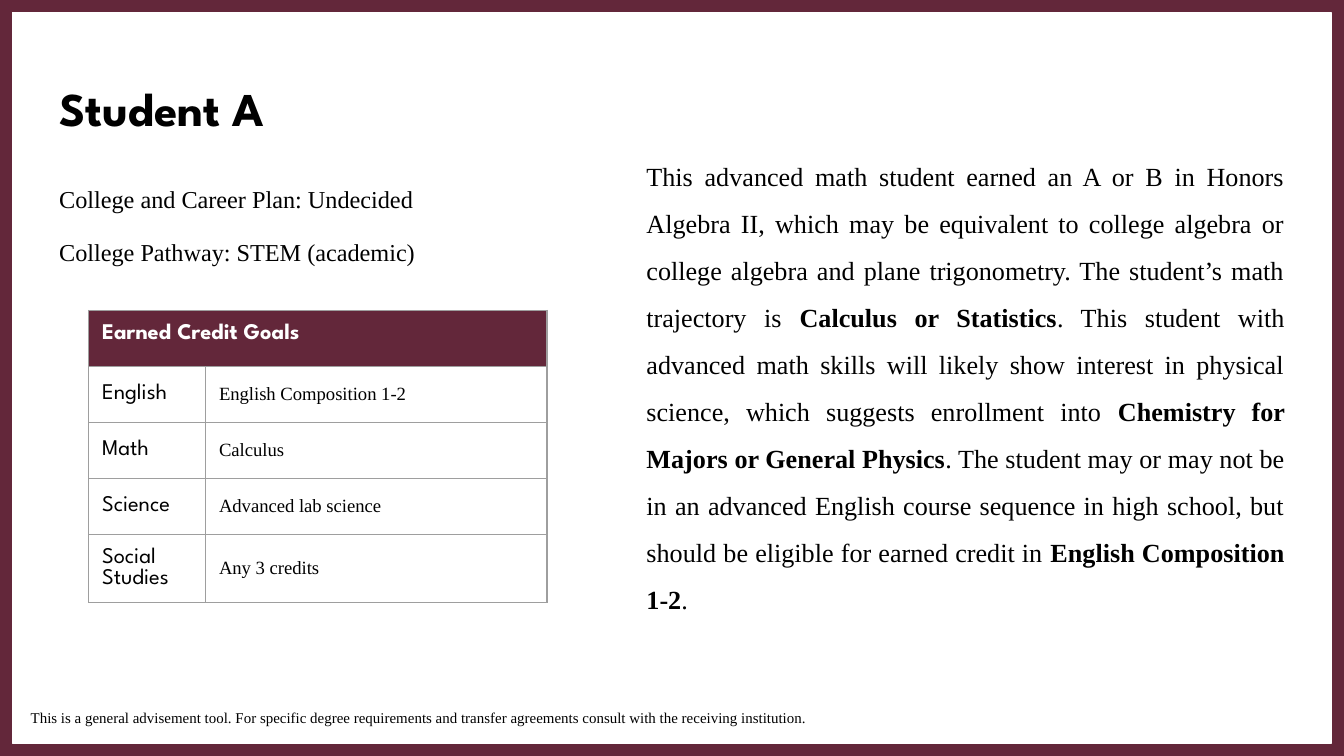
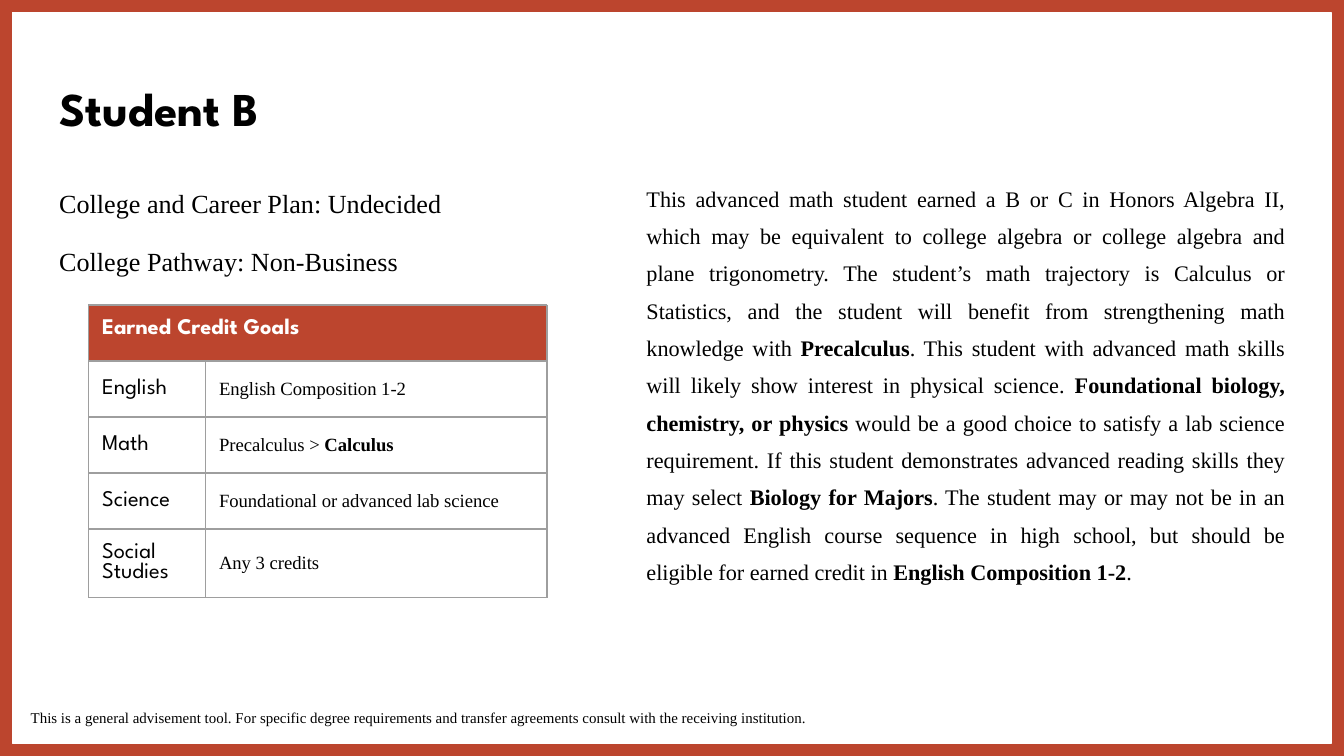
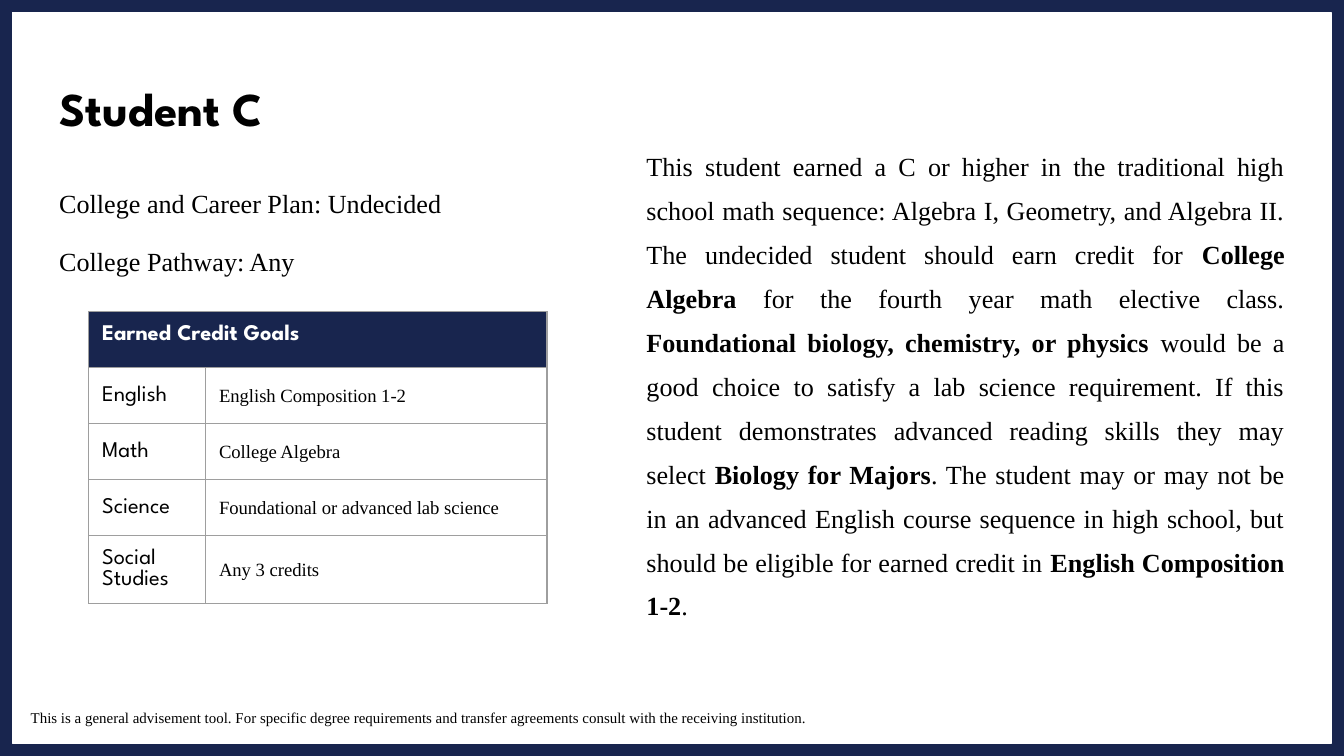
from lxml import etree
from pptx import Presentation
from pptx.dml.color import RGBColor
from pptx.enum.shapes import MSO_SHAPE
from pptx.enum.text import MSO_ANCHOR, MSO_AUTO_SIZE, PP_ALIGN
from pptx.oxml.ns import qn
from pptx.util import Inches, Pt

RECTANGLE = MSO_SHAPE.RECTANGLE
TOP, MIDDLE = MSO_ANCHOR.TOP, MSO_ANCHOR.MIDDLE
LEFT, JUSTIFY = PP_ALIGN.LEFT, PP_ALIGN.JUSTIFY
NO_AUTOFIT = MSO_AUTO_SIZE.NONE

DISPLAY, SERIF = "League Spartan", "Times New Roman"
BLACK, WHITE, GRID_GRAY = "000000", "FFFFFF", "9E9E9E"
SLIDE_WIDTH = 10
SLIDE_HEIGHT = SLIDE_WIDTH * 9 / 16
TWO_CONTENT_LAYOUT = 3
MARGIN = 0.1

PANEL_WIDTH, PANEL_HEIGHT = 9.81, 5.44
PANEL_BOX = ((SLIDE_WIDTH - PANEL_WIDTH) / 2, (SLIDE_HEIGHT - PANEL_HEIGHT) / 2,
             PANEL_WIDTH, PANEL_HEIGHT)
TITLE_BOX = (0.34, 0.49, 4.05, 0.63)
PLAN_BOX = (0.34, 1.26, 4.05, 1.01)
SUMMARY_BOX = (4.71, 0.44, 4.95, 4.77)
FOOTER_BOX = (0.13, 5.17, 9.73, 0.29)
TABLE_LEFT = 0.66
COLUMN_WIDTHS = (0.87, 2.54)
ROW_HEIGHT = 5 / 12

PLAN = "College and Career Plan: Undecided"
SUBJECTS = ("English", "Math", "Science", "Social Studies")
DISCLAIMER = ("This is a general advisement tool. For specific degree requirements and "
              "transfer agreements consult with the receiving institution.")
ENGLISH_NOTE = ("The student may or may not be in an advanced English course sequence in high "
                "school, but should be eligible for earned credit in **English Composition 1-2**.")
SCIENCE_NOTE = ("**Foundational biology, chemistry, or physics** would be a good choice to satisfy "
                "a lab science requirement. If this student demonstrates advanced reading skills "
                "they may select **Biology for Majors**. ")

# Double asterisks enclose bold words.
STUDENTS = [
    dict(
        name="Student A", accent="63273A", pathway="STEM (academic)",
        plan_format=dict(size=12.95, line_spacing=1.05),
        summary_format=dict(size=14, line_spacing=1.5),
        table_top=2.31,
        goals=("English Composition 1-2", "Calculus", "Advanced lab science", "Any 3 credits"),
        summary="This advanced math student earned an A or B in Honors Algebra II, which may be "
                "equivalent to college algebra or college algebra and plane trigonometry. The "
                "student’s math trajectory is **Calculus or Statistics**. This student with "
                "advanced math skills will likely show interest in physical science, which "
                "suggests enrollment into **Chemistry for Majors or General Physics**. "
                + ENGLISH_NOTE,
    ),
    dict(
        name="Student B", accent="BC452E", pathway="Non-Business",
        plan_format=dict(size=14, line_spacing=1.15),
        summary_format=dict(size=11.9, line_spacing=1.4),
        table_top=2.27,
        goals=("English Composition 1-2", "Precalculus > **Calculus**",
               "Foundational or advanced lab science", "Any 3 credits"),
        summary="This advanced math student earned a B or C in Honors Algebra II, which may be "
                "equivalent to college algebra or college algebra and plane trigonometry. The "
                "student’s math trajectory is Calculus or Statistics, and the student will "
                "benefit from strengthening math knowledge with **Precalculus**. This student "
                "with advanced math skills will likely show interest in physical science. "
                + SCIENCE_NOTE + ENGLISH_NOTE,
    ),
    dict(
        name="Student C", accent="18254E", pathway="Any",
        plan_format=dict(size=14, line_spacing=1.15),
        summary_format=dict(size=14, line_spacing=1.4),
        table_top=2.32,
        goals=("English Composition 1-2", "College Algebra",
               "Foundational or advanced lab science", "Any 3 credits"),
        summary="This student earned a C or higher in the traditional high school math sequence: "
                "Algebra I, Geometry, and Algebra II. The undecided student should earn credit "
                "for **College Algebra** for the fourth year math elective class. "
                + SCIENCE_NOTE + ENGLISH_NOTE,
    ),
]


def color(hex_code):
    return RGBColor.from_string(hex_code)


def inches(box):
    return [Inches(length) for length in box]


def place(shape, box, anchor=TOP):
    """Set a text shape's box, margins and anchor."""
    shape.left, shape.top, shape.width, shape.height = inches(box)
    frame = shape.text_frame
    frame.word_wrap = True
    frame.auto_size = NO_AUTOFIT
    frame.vertical_anchor = anchor
    frame.margin_left = frame.margin_right = Inches(MARGIN)
    frame.margin_top = frame.margin_bottom = Inches(MARGIN)


def write(paragraph, text, *, font=SERIF, size=10, fill=BLACK, bold=False, align=LEFT,
          line_spacing=1.0, before=0, after=0):
    """Fill a paragraph, with text between double asterisks in bold."""
    properties = paragraph._p.get_or_add_pPr()
    properties.set("marL", "0")
    properties.set("indent", "0")
    etree.SubElement(properties, qn("a:buNone"))
    paragraph.alignment = align
    paragraph.line_spacing = line_spacing
    paragraph.space_before, paragraph.space_after = Pt(before), Pt(after)
    for index, part in enumerate(text.split("**")):
        if part:
            run = paragraph.add_run()
            run.text = part
            run.font.name, run.font.size = font, Pt(size)
            run.font.bold = bold or index % 2 == 1
            run.font.color.rgb = color(fill)


def add_frame(slide, accent):
    """Color the background and lay the white panel behind everything."""
    background = slide.background.fill
    background.solid()
    background.fore_color.rgb = color(accent)
    panel = slide.shapes.add_shape(RECTANGLE, *inches(PANEL_BOX))
    panel.shadow.inherit = False
    panel.fill.solid()
    panel.fill.fore_color.rgb = color(WHITE)
    panel.line.color.rgb = color(WHITE)
    panel.line.width = Pt(0.75)
    slide.shapes.element.insert(2, panel.element)


def fill_placeholders(slide, student):
    title, plan, summary = slide.placeholders
    place(title, TITLE_BOX)
    write(title.text_frame.paragraphs[0], student["name"], font=DISPLAY, size=25.2, bold=True)

    place(plan, PLAN_BOX)
    write(plan.text_frame.paragraphs[0], PLAN, **student["plan_format"])
    write(plan.text_frame.add_paragraph(), f"College Pathway: {student['pathway']}",
          before=12, after=12, **student["plan_format"])

    place(summary, SUMMARY_BOX, MIDDLE)
    write(summary.text_frame.paragraphs[0], student["summary"], align=JUSTIFY, after=12,
          **student["summary_format"])


def add_borders(cell):
    properties = cell._tc.get_or_add_tcPr()
    for side in ("lnL", "lnR", "lnT", "lnB"):
        line = etree.SubElement(properties, qn(f"a:{side}"), w=str(Pt(0.75)))
        fill = etree.SubElement(line, qn("a:solidFill"))
        etree.SubElement(fill, qn("a:srgbClr"), val=GRID_GRAY)


def format_cell(cell, fill=None, anchor=MIDDLE):
    cell.margin_left = cell.margin_right = Inches(MARGIN)
    cell.margin_top = cell.margin_bottom = Inches(MARGIN)
    cell.vertical_anchor = anchor
    add_borders(cell)
    if fill:
        cell.fill.solid()
        cell.fill.fore_color.rgb = color(fill)
    else:
        cell.fill.background()


def add_goals_table(slide, top, goals, accent):
    row_count = len(goals) + 1
    box = (TABLE_LEFT, top, sum(COLUMN_WIDTHS), row_count * ROW_HEIGHT)
    table = slide.shapes.add_table(row_count, len(COLUMN_WIDTHS), *inches(box)).table
    table.first_row = table.horz_banding = False
    for column, width in zip(table.columns, COLUMN_WIDTHS):
        column.width = Inches(width)
    for row in table.rows:
        row.height = Inches(ROW_HEIGHT)

    header = table.cell(0, 0)
    header.merge(table.cell(0, 1))
    for column in range(len(COLUMN_WIDTHS)):
        format_cell(table.cell(0, column), accent, TOP)
    write(header.text_frame.paragraphs[0], "Earned Credit Goals",
          font=DISPLAY, size=12, fill=WHITE, bold=True)

    for row, (subject, goal) in enumerate(zip(SUBJECTS, goals), start=1):
        subject_cell, goal_cell = table.cell(row, 0), table.cell(row, 1)
        format_cell(subject_cell)
        format_cell(goal_cell)
        write(subject_cell.text_frame.paragraphs[0], subject, font=DISPLAY, size=12)
        write(goal_cell.text_frame.paragraphs[0], goal)


def add_footer(slide):
    footer = slide.shapes.add_textbox(*inches(FOOTER_BOX))
    place(footer, FOOTER_BOX)
    write(footer.text_frame.paragraphs[0], DISCLAIMER, size=8)


def add_student_slide(presentation, student):
    slide = presentation.slides.add_slide(presentation.slide_layouts[TWO_CONTENT_LAYOUT])
    add_frame(slide, student["accent"])
    fill_placeholders(slide, student)
    add_goals_table(slide, student["table_top"], student["goals"], student["accent"])
    add_footer(slide)


def main():
    presentation = Presentation()
    presentation.slide_width = Inches(SLIDE_WIDTH)
    presentation.slide_height = Inches(SLIDE_HEIGHT)
    for student in STUDENTS:
        add_student_slide(presentation, student)
    presentation.save("out.pptx")


if __name__ == "__main__":
    main()
